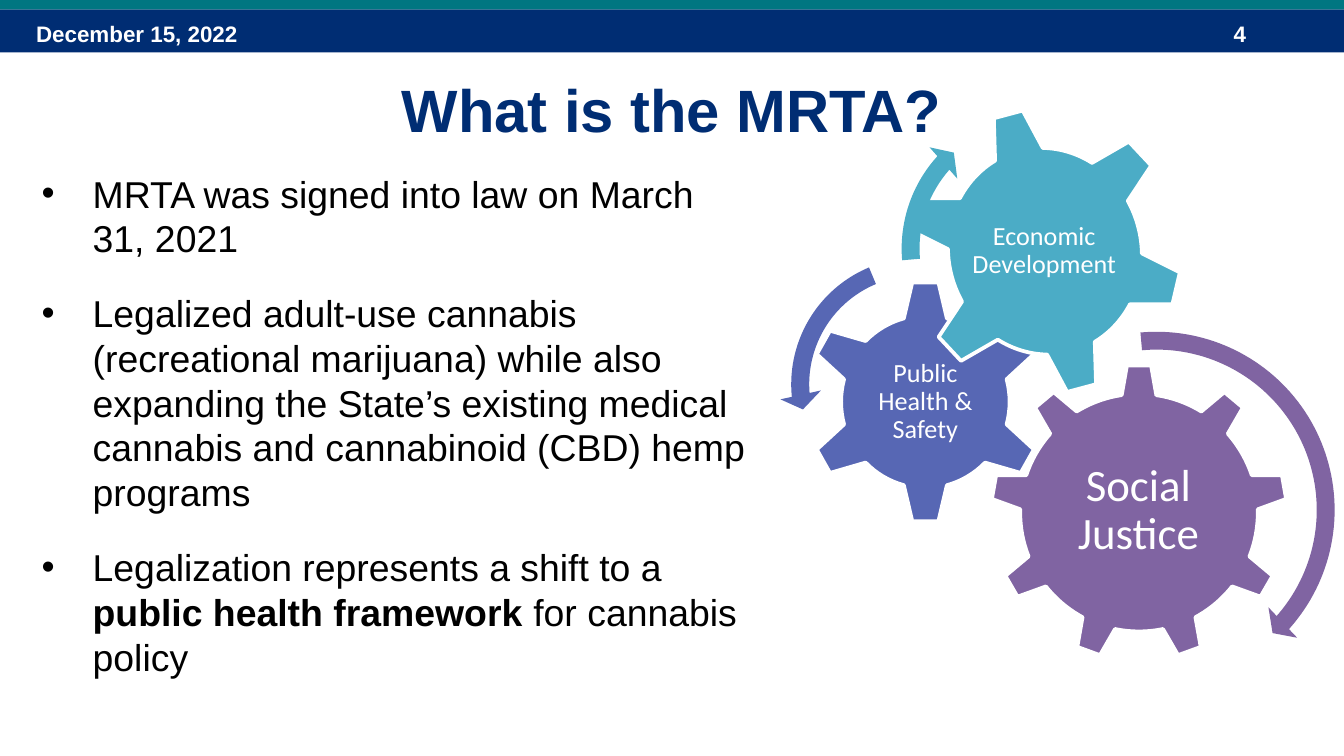
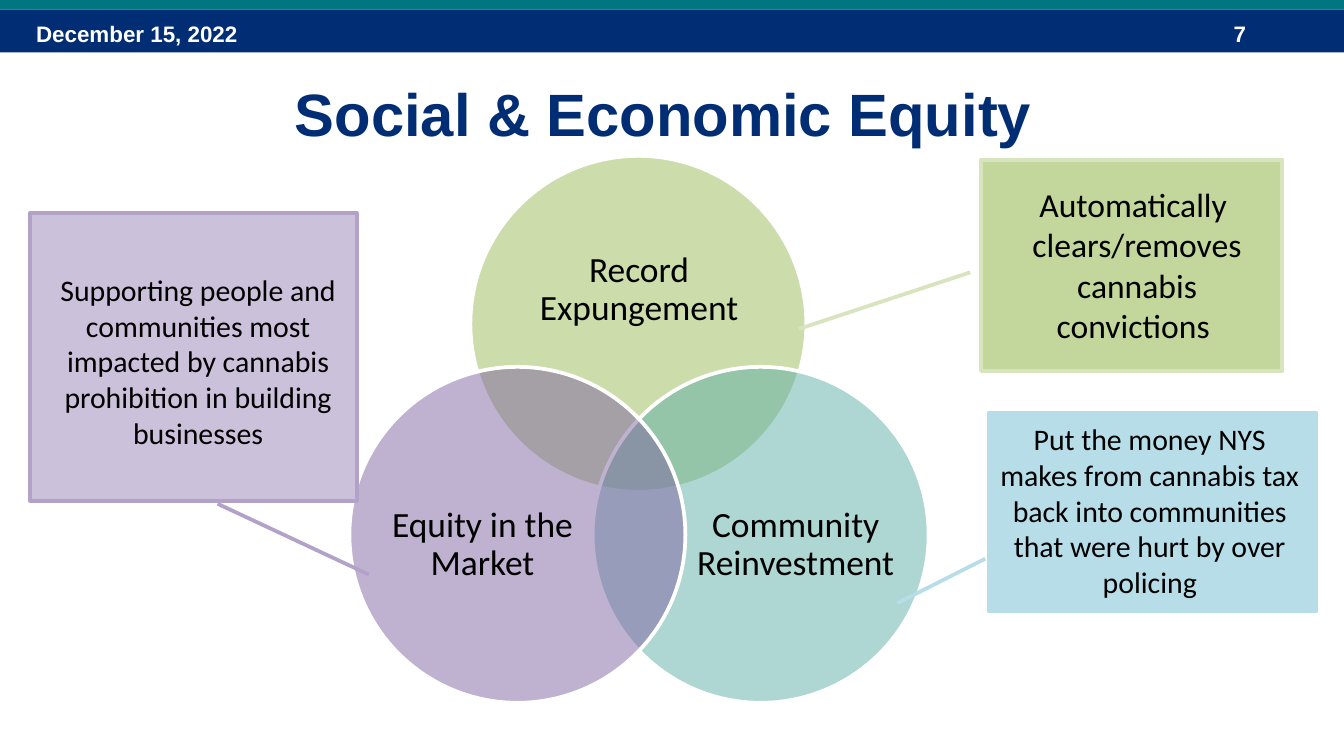
"""Build two slides on the MRTA and on social and economic equity."""
import pptx
import pptx.dml.color
import pptx.enum.shapes
import pptx.enum.text
import pptx.oxml
import pptx.oxml.ns
import pptx.util

Inches = pptx.util.Inches
Pt = pptx.util.Pt
Shape = pptx.enum.shapes.MSO_SHAPE
Align = pptx.enum.text.PP_ALIGN
Anchor = pptx.enum.text.MSO_ANCHOR

COLORS = {
    "navy": "002D73", "teal": "007681", "white": "FFFFFF", "black": "000000",
    "purple": "8064A2", "indigo": "5767B4", "aqua": "4BACC6",
    "green": "9BBB59", "sea": "5EAFA6",
    "pale green": "C3D69B", "green edge": "D7E4BD",
    "pale purple": "CCC1DA", "purple edge": "B3A2C7", "pale blue": "B7DEE8",
}
HEADING_FONT, DIAGRAM_FONT = "Arial", "Calibri"


def rgb(name):
    return pptx.dml.color.RGBColor.from_string(COLORS[name])


class Deck:
    """Holds the presentation, its style and the current slide."""

    def __init__(self):
        self.presentation = pptx.Presentation()
        self.presentation.slide_width = Inches(10)
        self.presentation.slide_height = Inches(10 * 9 / 16)
        self.slide = None

    def place(self, shape, box):
        shape.left, shape.top, shape.width, shape.height = map(Inches, box)

    def style(self, paragraph, size, font, color, bold=None):
        for run in paragraph.runs:
            run.font.size = Pt(size)
            run.font.name = font
            run.font.color.rgb = rgb(color)
            if bold is not None:
                run.font.bold = bold

    def new_slide(self, layout, number, title, title_box):
        layouts = self.presentation.slide_layouts
        self.slide = self.presentation.slides.add_slide(layouts.get_by_name(layout))
        self.shape(Shape.RECTANGLE, (0, 0.07, 10, 0.32), "navy")
        for box, text in (((0.17, 0.1, 2.33, 0.3), "December 15, 2022"),
                          ((9.08, 0.1, 0.75, 0.3), str(number))):
            self.text(box, [text], 12, HEADING_FONT, "white", bold=True, align=Align.LEFT)
        self.shape(Shape.RECTANGLE, (0, -0.02, 10, 0.09), "teal")
        heading = self.slide.shapes.title
        self.place(heading, title_box)
        heading.text_frame.text = title
        heading.text_frame.vertical_anchor = Anchor.MIDDLE
        paragraph = heading.text_frame.paragraphs[0]
        paragraph.alignment = Align.CENTER
        self.style(paragraph, 32, HEADING_FONT, "navy", True)

    def shape(self, kind, box, fill, line=None, adjustments=(), rotation=0, alpha=None):
        shape = self.slide.shapes.add_shape(kind, *map(Inches, box))
        shape.shadow.inherit = False
        shape.rotation = rotation
        shape.fill.solid()
        shape.fill.fore_color.rgb = rgb(fill)
        if alpha is not None:
            color = shape.fill._xPr.find(".//" + pptx.oxml.ns.qn("a:srgbClr"))
            color.append(pptx.oxml.parse_xml(
                f'<a:alpha {pptx.oxml.ns.nsdecls("a")} val="{alpha * 1000}"/>'))
        if line:
            shape.line.color.rgb = rgb(line)
            shape.line.width = Pt(2)
        else:
            shape.line.fill.background()
        for index, value in enumerate(adjustments):
            shape.adjustments[index] = value
        return shape

    def text(self, box, lines, size, font=DIAGRAM_FONT, color="black", bold=None,
             align=Align.CENTER):
        frame = self.slide.shapes.add_textbox(*map(Inches, box)).text_frame
        frame.word_wrap = True
        frame.text = "\n".join(lines)
        for paragraph in frame.paragraphs:
            paragraph.alignment = align
            self.style(paragraph, size, font, color, bold)
        return frame

    def label(self, box, text, size, color="black", inset=0):
        frame = self.text(box, [text], size, color=color)
        frame.vertical_anchor = Anchor.MIDDLE
        frame.margin_left = frame.margin_right = Inches(inset)
        frame.margin_top = frame.margin_bottom = Inches(inset)
        frame.paragraphs[0].line_spacing = 0.9

    def callout(self, box, fill, line, adjustments, text_box, lines, size, rotation=0):
        self.shape(Shape.LINE_CALLOUT_1, box, fill, line, adjustments, rotation)
        frame = self.text(text_box, lines, size)
        frame.auto_size = pptx.enum.text.MSO_AUTO_SIZE.SHAPE_TO_FIT_TEXT

    def bullets(self, box, items):
        body = self.slide.placeholders[1]
        self.place(body, box)
        frame = body.text_frame
        for index, item in enumerate(items):
            paragraph = frame.add_paragraph() if index else frame.paragraphs[0]
            paragraph.space_before = Pt(4 if index else 0)
            paragraph.space_after = Pt(12)
            properties = paragraph._p.get_or_add_pPr()
            properties.set("marL", str(Inches(0.38)))
            properties.set("indent", str(-Inches(0.38)))
            properties.append(pptx.oxml.parse_xml(
                f'<a:buChar {pptx.oxml.ns.nsdecls("a")} char="•"/>'))
            for part, words in enumerate(item.split("**")):
                run = paragraph.add_run()
                run.text = words
                run.font.bold = part % 2 == 1
            self.style(paragraph, 20, HEADING_FONT, "black")


def build_mrta(deck):
    deck.new_slide("Title and Content", 4, "What is the MRTA?", (0, 0.39, 10, 0.83))
    deck.bullets((0.21, 1.22, 5.48, 4.19), [
        "MRTA was signed into law on March 31, 2021",
        "Legalized adult-use cannabis (recreational marijuana) while also expanding "
        "the State’s existing medical cannabis and cannabinoid (CBD) hemp programs",
        "Legalization represents a shift to a **public health framework** for cannabis policy",
    ])
    gears = [
        (Shape.GEAR_9, (7.37, 2.71, 2.21, 2.21), "purple", 0,
         (7.81, 3.23, 1.32, 1.14), "Social Justice", 24),
        (Shape.GEAR_6, (5.99, 2.08, 1.79, 1.82), "indigo", 0,
         (6.44, 2.54, 0.89, 0.9), "Public Health & Safety", 14),
        (Shape.GEAR_6, (6.75, 0.79, 2.05, 2.16), "aqua", 345,
         (7.19, 1.27, 1.16, 1.2), "Economic Development", 14),
    ]
    for kind, box, fill, rotation, label_box, text, size in gears:
        deck.shape(kind, box, fill, "white", rotation=rotation)
        deck.label(label_box, text, size, "white", 0.02)
    arrows = [
        (Shape.CIRCULAR_ARROW, (7.19, 2.38, 2.83, 2.83), "purple",
         (0.047, 2.99, 25.025, 158.91, 0.055)),
        (Shape.LEFT_CIRCULAR_ARROW, (5.8, 1.83, 2.06, 2.06), "indigo",
         (0.065, 4.3, 104.891, 148.378, 0.075)),
        (Shape.CIRCULAR_ARROW, (6.62, 0.74, 2.22, 2.22), "aqua",
         (0.06, 3.941, 133.138, 105.082, 0.07)),
    ]
    for kind, box, fill, adjustments in arrows:
        deck.shape(kind, box, fill, adjustments=adjustments)


def build_equity(deck):
    deck.new_slide("Title Only", 7, "Social & Economic Equity ", (0, 0.35, 10, 0.98))
    circles = [
        (3.5, 1.16, "green", (3.84, 1.6, 1.83, 1.12), "Record Expungement"),
        (4.41, 2.73, "sea", (5.17, 3.37, 1.5, 1.37), "Community Reinvestment"),
        (2.6, 2.73, "purple", (2.84, 3.37, 1.5, 1.37), "Equity in the Market"),
    ]
    for left, top, fill, label_box, text in circles:
        deck.shape(Shape.OVAL, (left, top, 2.5, 2.5), fill, "white", alpha=50)
        deck.label(label_box, text, 19)
    deck.callout((7.3, 1.19, 2.24, 1.57), "pale green", "green edge",
                 (0.533, -0.036, 0.801, -0.605), (7.37, 1.32, 2.18, 1.31),
                 ["Automatically ", "clears/removes cannabis convictions "], 18)
    deck.callout((0.37, 1.44, 2.14, 2.43), "pale purple", "purple edge",
                 (0.574, -0.011, 1.037, -0.257), (0.26, 1.97, 2.43, 1.68),
                 ["Supporting people and communities most impacted by cannabis "
                  "prohibition in building businesses"], 16, rotation=270)
    deck.callout((7.36, 3.07, 2.43, 1.48), "pale blue", "pale blue",
                 (0.735, -0.012, 0.958, -0.281), (7.34, 3.08, 2.43, 1.45),
                 ["Put the money NYS makes from cannabis tax back into communities "
                  "that were hurt by over policing"], 16)


def main():
    deck = Deck()
    build_mrta(deck)
    build_equity(deck)
    deck.presentation.save("out.pptx")


if __name__ == "__main__":
    main()
